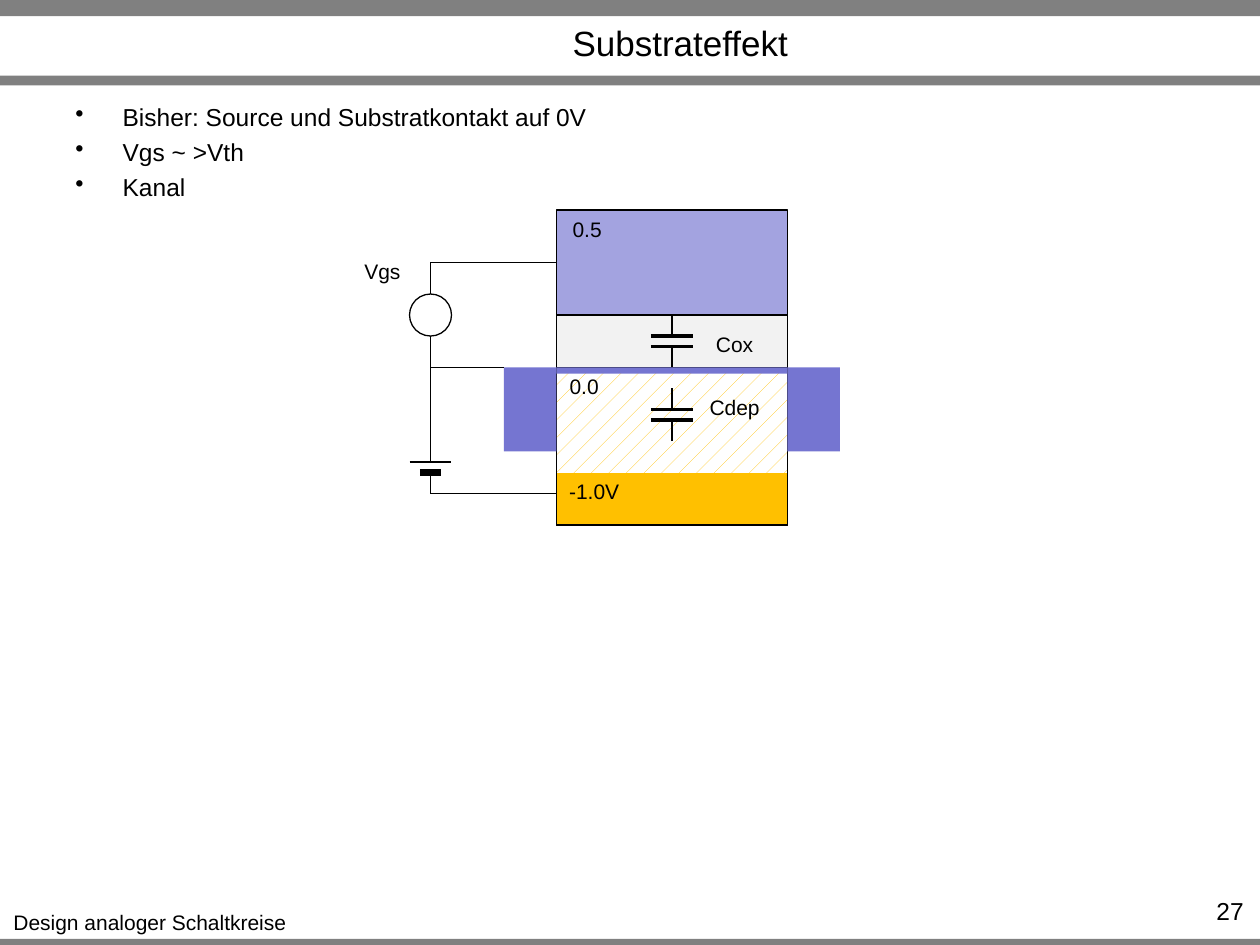
from dataclasses import dataclass

from lxml import etree
from pptx import Presentation
from pptx.dml.color import RGBColor
from pptx.enum import dml, shapes, text
from pptx.oxml import ns
from pptx.util import Pt

RECT = shapes.MSO_SHAPE.RECTANGLE
FLOW = shapes.MSO_SHAPE.FLOWCHART_PROCESS
OVAL = shapes.MSO_SHAPE.OVAL
LEFT, MID, RIGHT = text.PP_ALIGN.LEFT, text.PP_ALIGN.CENTER, text.PP_ALIGN.RIGHT


@dataclass(frozen=True)
class Theme:
    font: str = "Arial"
    ink: str = "000000"
    paper: str = "FFFFFF"
    bar: str = "808080"
    gate: str = "A3A3E0"
    oxide: str = "F2F2F2"
    doped: str = "7575D1"
    bulk: str = "FFC000"
    title: float = 20
    body: float = 14
    label: float = 12
    thin: float = 0.75
    plate: float = 2
    thick: float = 3.5


THEME = Theme()


def color(code):
    return RGBColor.from_string(code)


def block(slide, box, fill=None, edge=False, kind=RECT):
    shape = slide.shapes.add_shape(kind, *map(Pt, box))
    shape.shadow.inherit = False
    if fill:
        shape.fill.solid()
        shape.fill.fore_color.rgb = color(fill)
    else:
        shape.fill.background()
    if edge:
        shape.line.color.rgb = color(THEME.ink)
        shape.line.width = Pt(THEME.thin)
    else:
        shape.line.fill.background()
    return shape


def hatch(shape):
    """Give the depletion zone its pattern."""
    shape.fill.patterned()
    shape.fill.pattern = dml.MSO_PATTERN.PERCENT_5
    shape.fill.fore_color.rgb = color(THEME.bulk)
    shape.fill.back_color.rgb = color(THEME.paper)


def wire(home, start, end, width=THEME.thin):
    """Draw a line on a slide or in a group."""
    line = home.shapes.add_connector(
        shapes.MSO_CONNECTOR.STRAIGHT, *map(Pt, start + end))
    line.line.color.rgb = color(THEME.ink)
    line.line.width = Pt(width)
    etree.SubElement(line._element.spPr, ns.qn("a:effectLst"))
    return line


def cell(slide, x, top, bottom, plates):
    """Draw two stems and two plates; a plate is y, half width and weight."""
    group = slide.shapes.add_group_shape()
    upper, lower = plates
    stems = (wire(group, (x, top), (x, upper[0])),
             wire(group, (x, bottom), (x, lower[0])))
    for y, half, weight in plates:
        wire(group, (x - half, y), (x + half, y), weight)
    return stems


def cap(slide, x, top):
    plates = [(top + gap, 12, THEME.plate) for gap in (12, 18)]
    return cell(slide, x, top, top + 30, plates)


def write(slide, box, lines, size, align=LEFT, wrap=True, bullet=False):
    shape = slide.shapes.add_textbox(*map(Pt, box))
    frame = shape.text_frame
    frame.text = "\n".join(lines)
    frame.word_wrap = wrap
    for i, para in enumerate(frame.paragraphs):
        para.alignment = align
        if bullet:
            mark(para)
            para.space_before = Pt(3.2 if i else 0)
        for run in para.runs:
            run.font.name = THEME.font
            run.font.size = Pt(size)
            run.font.color.rgb = color(THEME.ink)
    return frame


def mark(para):
    """Add a bullet with a hanging indent."""
    props = para._p.get_or_add_pPr()
    props.set("marL", str(Pt(27)))
    props.set("indent", str(-Pt(27)))
    etree.SubElement(props, ns.qn("a:buChar")).set("char", "•")


def label(slide, x, y, width, words):
    write(slide, (x, y, width, 21.6), [words], THEME.label, MID, wrap=False)


def page(slide):
    for y, height in ((536.5, 3.5), (0, 9.2), (43.3, 5.5)):
        block(slide, (0, y, 720, height), THEME.bar)
    label(slide, 0, 516.2, 171.4, "Design analoger Schaltkreise")
    title = write(slide, (93.6, 10.4, 590.4, 27.4), ["Substrateffekt"],
                  THEME.title, MID)
    title.vertical_anchor = text.MSO_ANCHOR.MIDDLE
    points = ["Bisher: Source und Substratkontakt auf 0V", "Vgs ~ >Vth", "Kanal"]
    write(slide, (36, 54.7, 648, 64), points, THEME.body, bullet=True)
    write(slide, (655.2, 508.3, 62.6, 24), ["27"], THEME.body, RIGHT)


def device(slide):
    left, wide, top = 318, 132, 210
    bulk = (left, top, wide, 90)
    block(slide, bulk, THEME.bulk, True, FLOW)
    hatch(block(slide, (left, top, wide, 60), THEME.paper, kind=FLOW))
    oxide = block(slide, (left, 180, wide, 30), THEME.oxide, True, FLOW)
    gate = block(slide, (left, 120, wide, 60), THEME.gate, True)
    block(slide, bulk, edge=True, kind=FLOW)
    for x in (left - 30, left + wide):
        block(slide, (x, top, 30, 48), THEME.doped)

    axis = left + wide / 2
    upper, lower = cap(slide, axis, 180)
    upper.begin_connect(gate, 2)
    lower.begin_connect(oxide, 2)
    cap(slide, axis, 222)
    block(slide, (left, top, wide, 3.6), THEME.doped)
    return gate


def supply(slide, gate):
    x = 246
    wire(slide, (x, 210), (288, 210))
    wire(slide, (x, 252), (x, 210))
    cell(slide, x, 252, 282, [(264, 12, THEME.thin), (270, 6, THEME.thick)])
    wire(slide, (x, 282), (318, 282))
    wire(slide, (x, 192), (x, 210))
    block(slide, (x - 12, 168, 24, 24), edge=True, kind=OVAL)
    wire(slide, (x, 150), (x, 168))
    wire(slide, (318, 150), (x, 150)).begin_connect(gate, 1)


def main():
    deck = Presentation()
    deck.slide_width, deck.slide_height = Pt(720), Pt(540)
    slide = deck.slides.add_slide(deck.slide_layouts[6])
    page(slide)
    supply(slide, device(slide))
    for x, y, width, words in (
            (318, 270, 43.2, "-1.0V"), (200.9, 144, 35.3, "Vgs"),
            (401.8, 185.8, 36, "Cox"), (398.2, 221.8, 43.2, "Cdep"),
            (319.7, 120, 31.7, "0.5"), (318, 210, 31.7, "0.0")):
        label(slide, x, y, width, words)
    deck.save("out.pptx")


if __name__ == "__main__":
    main()
